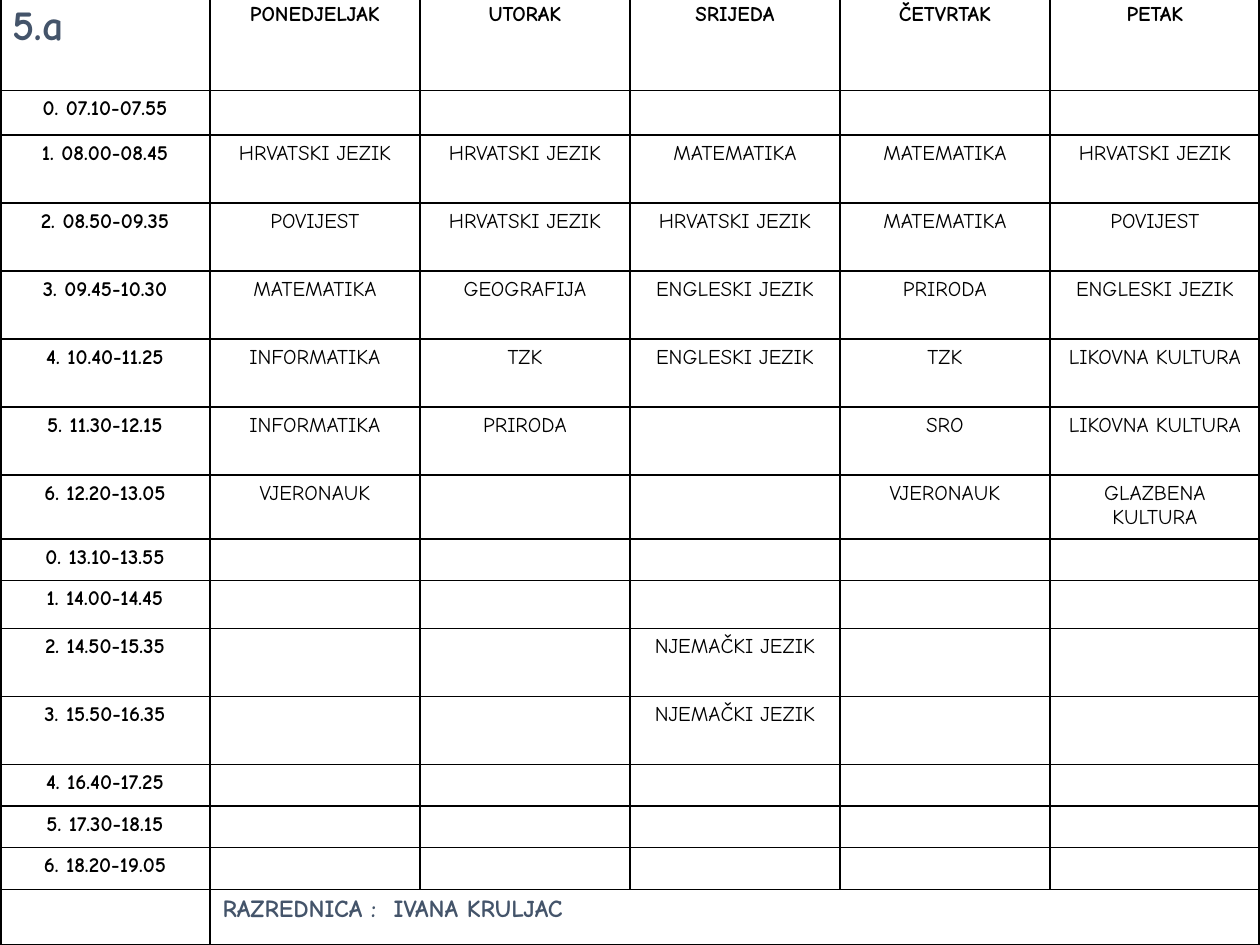
from lxml import etree
from pptx import Presentation
from pptx import util as u
from pptx.dml.color import RGBColor
from pptx.enum import text
from pptx.oxml.ns import qn

FONT = "Comic Neue"
INK, SLATE = "000000", "44546A"
THIN, THICK = 1, 2.25
DAYS = ["PONEDJELJAK", "UTORAK", "SRIJEDA", "ČETVRTAK", "PETAK"]
HEAD_HEIGHT, FOOT_HEIGHT = 0.75, 0.45
LESSONS = [
    (0.35, "0. 07.10-07.55", []),
    (0.54, "1. 08.00-08.45", ["HRVATSKI JEZIK", "HRVATSKI JEZIK", "MATEMATIKA", "MATEMATIKA", "HRVATSKI JEZIK"]),
    (0.54, "2. 08.50-09.35", ["POVIJEST", "HRVATSKI JEZIK", "HRVATSKI JEZIK", "MATEMATIKA", "POVIJEST"]),
    (0.54, "3. 09.45-10.30", ["MATEMATIKA", "GEOGRAFIJA", "ENGLESKI JEZIK", "PRIRODA", "ENGLESKI JEZIK"]),
    (0.54, "4. 10.40-11.25", ["INFORMATIKA", "TZK", "ENGLESKI JEZIK", "TZK", "LIKOVNA KULTURA"]),
    (0.54, "5. 11.30-12.15", ["INFORMATIKA", "PRIRODA", "", "SRO", "LIKOVNA KULTURA"]),
    (0.51, "6. 12.20-13.05", ["VJERONAUK", "", "", "VJERONAUK", "GLAZBENA KULTURA"]),
    (0.33, "0. 13.10-13.55", []),
    (0.38, "1. 14.00-14.45", []),
    (0.54, "2. 14.50-15.35", ["", "", "NJEMAČKI JEZIK"]),
    (0.54, "3. 15.50-16.35", ["", "", "NJEMAČKI JEZIK"]),
    (0.33, "4. 16.40-17.25", []),
    (0.33, "5. 17.30-18.15", []),
    (0.33, "6. 18.20-19.05", []),
]
HEADING = {"size": u.Pt(12), "bold": True, "name": FONT}
SUBJECT = {**HEADING, "bold": False}
CLASS_NAME = {**HEADING, "size": u.Pt(24)}
TEACHER = {**HEADING, "size": u.Pt(14)}


def color(value):
    return RGBColor.from_string(value)


def write(cell, words, fmt, ink=INK, align=text.PP_ALIGN.CENTER):
    p = cell.text_frame.paragraphs[0]
    p.alignment = align
    if not words:
        etree.SubElement(p._p, qn("a:endParaRPr"), sz=str(int(fmt["size"].pt * 100)))
        return
    r = p.add_run()
    r.text = words
    for name, value in fmt.items():
        setattr(r.font, name, value)
    r.font.color.rgb = color(ink)


def set_borders(cell, widths):
    tcPr = cell._tc.get_or_add_tcPr()
    for side, width in widths.items():
        ln = etree.SubElement(tcPr, qn(f"a:ln{side}"), w=str(u.Pt(width)))
        fill = etree.SubElement(ln, qn("a:solidFill"))
        etree.SubElement(fill, qn("a:srgbClr"), val=INK)


def frame_cells(table, rows, cols):
    for row in range(rows):
        for col in range(cols):
            cell = table.cell(row, col)
            if not cell.is_spanned:
                outer = {
                    "L": col == 0,
                    "R": col + cell.span_width == cols,
                    "T": row == 0,
                    "B": row == rows - 1,
                }
                set_borders(cell, {side: THICK if edge else THIN for side, edge in outer.items()})
            cell.fill.background()


def add_timetable(slide, left, top, width):
    heights = [HEAD_HEIGHT, *(lesson[0] for lesson in LESSONS), FOOT_HEIGHT]
    rows, cols = len(heights), len(DAYS) + 1
    table = slide.shapes.add_table(rows, cols, left, top, width, u.Inches(sum(heights))).table
    table.first_row = table.horz_banding = False
    for row, height in zip(table.rows, heights):
        row.height = u.Inches(height)
    for column in table.columns:
        column.width = width // cols

    write(table.cell(0, 0), "5.a", CLASS_NAME, SLATE, text.PP_ALIGN.LEFT)
    for col, day in enumerate(DAYS, 1):
        write(table.cell(0, col), day, HEADING)
    for row, (_, hours, subjects) in enumerate(LESSONS, 1):
        write(table.cell(row, 0), hours, HEADING)
        for col in range(1, cols):
            words = subjects[col - 1] if col <= len(subjects) else ""
            write(table.cell(row, col), words, SUBJECT)

    last = rows - 1
    table.cell(last, 1).merge(table.cell(last, cols - 1))
    write(table.cell(last, 0), "", HEADING)
    write(table.cell(last, 1), "RAZREDNICA :  IVANA KRULJAC", TEACHER, SLATE, text.PP_ALIGN.LEFT)
    frame_cells(table, rows, cols)


def main():
    prs = Presentation()
    prs.slide_width, prs.slide_height = u.Inches(10), u.Inches(7.5)
    slide = prs.slides.add_slide(prs.slide_layouts[6])
    add_timetable(slide, u.Inches(0), u.Inches(-0.03), prs.slide_width)
    prs.save("out.pptx")


if __name__ == "__main__":
    main()
